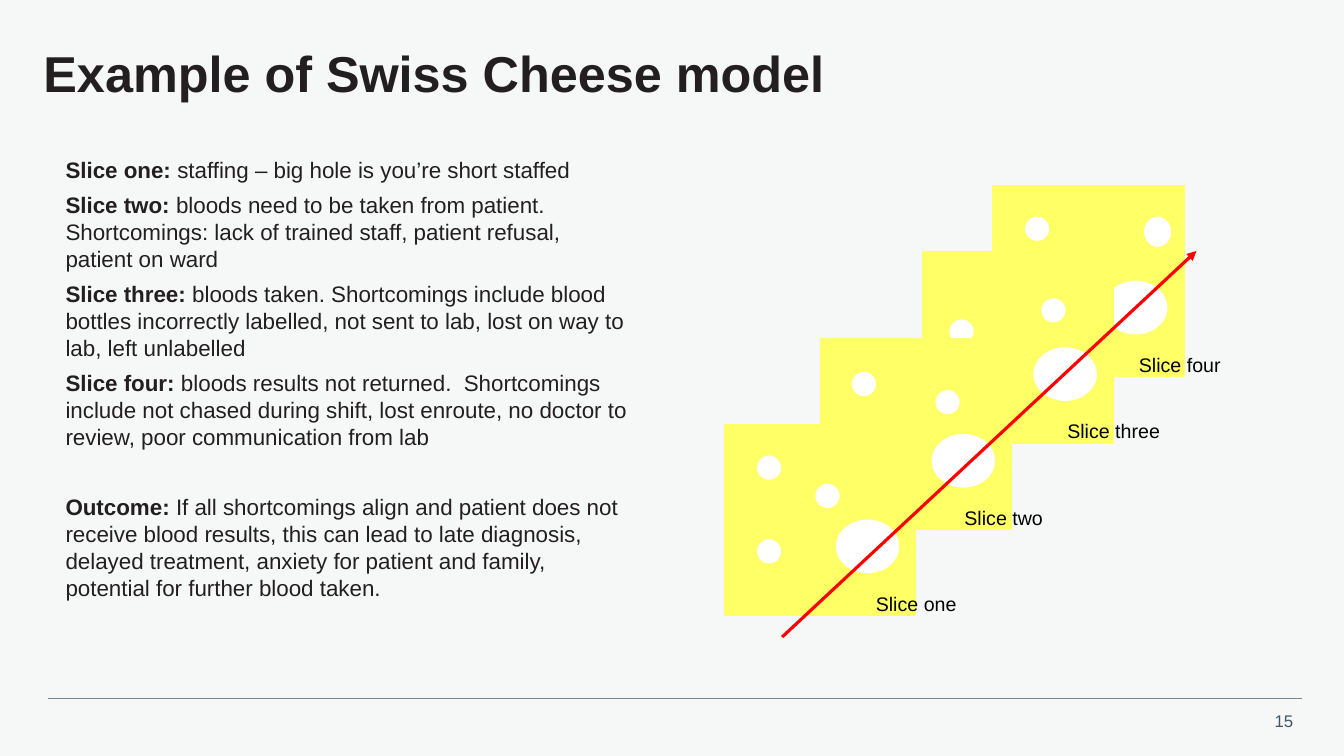
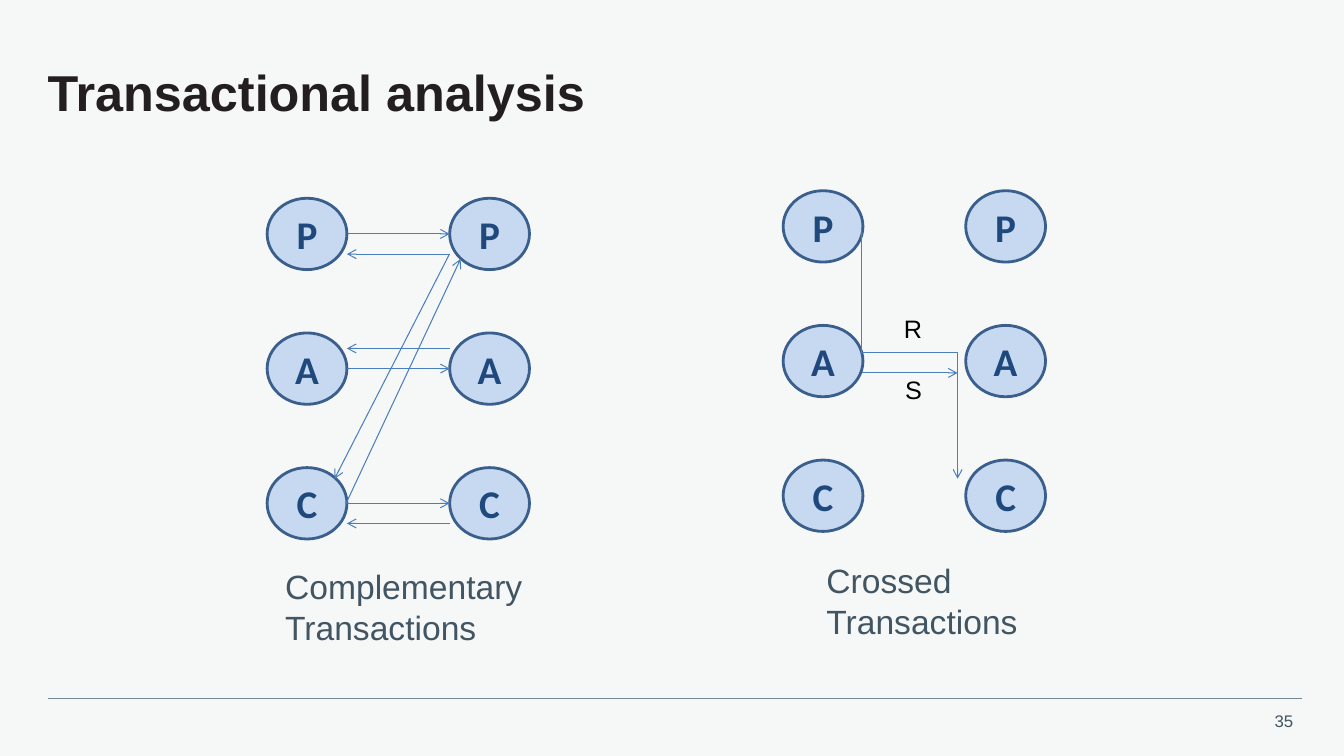
"""Build two training slides: the Swiss Cheese model and transactional analysis."""
from lxml import etree
from pptx import Presentation
from pptx.dml.color import RGBColor
from pptx.enum import shapes, text
from pptx.oxml.ns import qn
from pptx.util import Pt

PAPER = RGBColor(0xF6, 0xF8, 0xF8)
INK = RGBColor(0x23, 0x1F, 0x20)
SLATE = RGBColor(0x42, 0x55, 0x63)
RULE = RGBColor(0x76, 0x86, 0x92)
BLACK = RGBColor(0, 0, 0)
WHITE = RGBColor(255, 255, 255)
CHEESE = RGBColor(0xFF, 0xFF, 0x66)
RED = RGBColor(255, 0, 0)
EGO_FILL = RGBColor(0xC6, 0xD9, 0xF1)
EGO_LINE = RGBColor(0x3A, 0x5F, 0x8C)
EGO_TEXT = RGBColor(0x1F, 0x49, 0x7D)
ARROW = RGBColor(0x4B, 0x7E, 0xBC)

TITLE_FONT = dict(name="Arial", size=Pt(36), bold=True, color=INK)
BODY_FONT = dict(name="Arial", size=Pt(16), bold=False, color=INK)
NUMBER_FONT = dict(name="Arial", size=Pt(12), color=SLATE)
CAPTION_FONT = dict(name="Arial", size=Pt(24), color=SLATE)
SLICE_FONT = dict(name="Arial", size=Pt(14), color=BLACK)
SIGN_FONT = dict(name="Arial", size=Pt(18), color=BLACK)
EGO_FONT = dict(name="Calibri", size=Pt(28), bold=True, color=EGO_TEXT)

EXPLANATIONS = [
    ("Slice one: ", "staffing – big hole is you’re short staffed", 0),
    ("Slice two: ", "bloods need to be taken from patient. Shortcomings: lack of "
     "trained staff, patient refusal, patient on ward", 0),
    ("Slice three: ", "bloods taken. Shortcomings include blood bottles incorrectly "
     "labelled, not sent to lab, lost on way to lab, left unlabelled", 0),
    ("Slice four: ", "bloods results not returned.  Shortcomings include not chased "
     "during shift, lost enroute, no doctor to review, poor communication from lab", 0),
    ("Outcome: ", "If all shortcomings align and patient does not receive blood results, "
     "this can lead to late diagnosis, delayed treatment, anxiety for patient and "
     "family, potential for further blood taken.", 25),
]

SLICE_SIDE = 136.5
SMALL_HOLE = (17.3, 17.3)
TALL_HOLE = (19.4, 21.6)
BIG_HOLE = (79.3, 68, 45.4, 38.4)
SLICES = [
    ("Slice four", 709.2, 132.5, 97.2, 73.4,
     [(23, 22.3, *SMALL_HOLE), (108, 22.3, *TALL_HOLE)]),
    ("Slice three", 658.8, 180, 96.5, 81.4,
     [(19.4, 48.2, *SMALL_HOLE), (85, 33, *SMALL_HOLE)]),
    ("Slice two", 586.1, 241.9, 95.7, 71.3,
     [(22.3, 23.8, *SMALL_HOLE), (82.1, 36.7, *SMALL_HOLE)]),
    ("Slice one", 517.7, 303.1, 100.8, 72.7,
     [(23, 22.3, *SMALL_HOLE), (23, 82.1, *SMALL_HOLE), (64.8, 42.5, *SMALL_HOLE)]),
]

EGO_STATES = "PAC"
EGO_WIDTH, EGO_HEIGHT = 57, 51
COLUMN_STEP, ROW_STEP = 130.4, 96.2
DIAGRAMS = [
    (190.8, 141.6, ["Complementary", "Transactions"], (196.6, 401, 192.2, 65.5)),
    (559.4, 136.2, ["Crossed", "Transactions"], (583.2, 396.7, 152.6, 65.5)),
]
REPLY_OFFSETS = [14.4, -14.4, 14.4]
DIAGONALS = [(321.1, 181.4, 239, 342), (247, 360, 329, 185)]
SIGNS = [("S", 639.4, 263.5), ("R", 638.6, 220.3)]


def apply(target, formats):
    for name, value in formats.items():
        if name == "color":
            target.color.rgb = value
        else:
            setattr(target, name, value)


def place(shape, left, top, width, height):
    apply(shape, dict(left=Pt(left), top=Pt(top), width=Pt(width), height=Pt(height)))


def clear_insets(frame):
    apply(frame, dict(margin_left=0, margin_top=0, margin_right=0, margin_bottom=0,
                      auto_size=text.MSO_AUTO_SIZE.NONE, word_wrap=True))


def add_label(slide, lines, box, font, alignment=text.PP_ALIGN.LEFT):
    frame = slide.shapes.add_textbox(*map(Pt, box)).text_frame
    frame.word_wrap = False
    frame.text = "\n".join(lines)
    for paragraph in frame.paragraphs:
        paragraph.alignment = alignment
        apply(paragraph.font, font)


def add_line(slide, ends, color, width, head=None, kind=shapes.MSO_CONNECTOR.STRAIGHT):
    connector = slide.shapes.add_connector(kind, *map(Pt, ends))
    apply(connector.line, dict(color=color, width=Pt(width)))
    properties = connector._element.spPr
    if head:
        etree.SubElement(properties.find(qn("a:ln")), qn("a:tailEnd"), type=head)
    etree.SubElement(properties, qn("a:effectLst"))
    return connector


def add_vertical_elbow(slide, start_x, start_y, end_x, end_y):
    middle_x, middle_y = (start_x + end_x) / 2, (start_y + end_y) / 2
    half_run, half_rise = (end_x - start_x) / 2, (end_y - start_y) / 2
    ends = (middle_x + half_rise, middle_y - half_run,
            middle_x - half_rise, middle_y + half_run)
    elbow = add_line(slide, ends, ARROW, 0.75, "arrow", shapes.MSO_CONNECTOR.ELBOW)
    elbow._element.spPr.find(qn("a:xfrm")).set("rot", str(270 * 60000))


def add_filled(container, kind, box, fill, line=None, width=1):
    shape = container.shapes.add_shape(kind, *map(Pt, box))
    shape.shadow.inherit = False
    shape.fill.solid()
    shape.fill.fore_color.rgb = fill
    if line is None:
        shape.line.fill.background()
    else:
        apply(shape.line, dict(color=line, width=Pt(width)))
    return shape


def add_base(presentation, layout, title, left, top, number):
    slide = presentation.slides.add_slide(presentation.slide_layouts[layout])
    place(slide.shapes.title, left, top, 898, 68.4)
    frame = slide.shapes.title.text_frame
    clear_insets(frame)
    frame.vertical_anchor = text.MSO_ANCHOR.MIDDLE
    frame.text = title
    paragraph = frame.paragraphs[0]
    apply(paragraph, dict(alignment=text.PP_ALIGN.LEFT, line_spacing=0.9))
    apply(paragraph.font, TITLE_FONT)
    add_label(slide, [number], (901.4, 504, 29.5, 21.6), NUMBER_FONT, text.PP_ALIGN.RIGHT)
    add_line(slide, (34, 499, 930, 499), RULE, 0.5)
    return slide


def fill_explanations(body):
    place(body, 46.8, 111.6, 401.8, 382)
    frame = body.text_frame
    clear_insets(frame)
    frame.vertical_anchor = text.MSO_ANCHOR.TOP
    for index, (lead, detail, gap) in enumerate(EXPLANATIONS):
        paragraph = frame.add_paragraph() if index else frame.paragraphs[0]
        properties = paragraph._p.get_or_add_pPr()
        properties.set("marL", "0")
        properties.set("indent", "0")
        etree.SubElement(properties, qn("a:buNone"))
        apply(paragraph, dict(space_before=Pt(gap), space_after=Pt(6)))
        for content, bold in ((lead, True), (detail, False)):
            run = paragraph.add_run()
            run.text = content
            apply(run.font, {**BODY_FONT, "bold": bold})


def build_cheese(presentation):
    slide = add_base(presentation, 1, "Example of Swiss Cheese model", 31, 20.2, "15")
    fill_explanations(slide.placeholders[1])
    for _, left, top, _, _, holes in SLICES:
        group = slide.shapes.add_group_shape()
        add_filled(group, shapes.MSO_SHAPE.RECTANGLE,
                   (left, top, SLICE_SIDE, SLICE_SIDE), CHEESE, CHEESE)
        for x, y, width, height in holes + [BIG_HOLE]:
            add_filled(group, shapes.MSO_SHAPE.OVAL,
                       (left + x, top + y, width, height), WHITE)
    add_line(slide, (558.7, 455, 854.6, 179.3), RED, 2.25, "triangle")
    for name, left, top, offset, width, _ in SLICES:
        add_label(slide, [name], (left + offset, top + 116, width, 24.5), SLICE_FONT)


def build_transactions(presentation):
    slide = add_base(presentation, 5, "Transactional analysis", 34, 33.8, "35")
    for left, top, caption, caption_box in DIAGRAMS:
        for column in range(2):
            for row, state in enumerate(EGO_STATES):
                box = (left + column * COLUMN_STEP, top + row * ROW_STEP,
                       EGO_WIDTH, EGO_HEIGHT)
                circle = add_filled(slide, shapes.MSO_SHAPE.OVAL, box,
                                    EGO_FILL, EGO_LINE, 2)
                circle.text_frame.text = state
                circle.text_frame.vertical_anchor = text.MSO_ANCHOR.MIDDLE
                paragraph = circle.text_frame.paragraphs[0]
                paragraph.alignment = text.PP_ALIGN.CENTER
                apply(paragraph.font, EGO_FONT)
        add_label(slide, caption, caption_box, CAPTION_FONT)

    left, top = DIAGRAMS[0][:2]
    start, end = left + EGO_WIDTH, left + COLUMN_STEP
    arrows = list(DIAGONALS)
    for row, offset in enumerate(REPLY_OFFSETS):
        middle = top + EGO_HEIGHT / 2 + row * ROW_STEP
        arrows += [(start, middle, end, middle),
                   (end, middle + offset, start, middle + offset)]
    arrows.append((615.6, 266.4, 684, 266.4))
    for ends in arrows:
        add_line(slide, ends, ARROW, 0.75, "arrow")
    add_vertical_elbow(slide, 615.6, 162, 684, 342)
    for sign, left, top in SIGNS:
        add_label(slide, [sign], (left, top, 27, 29), SIGN_FONT)


def main():
    presentation = Presentation()
    apply(presentation, dict(slide_width=Pt(960), slide_height=Pt(540)))
    background = presentation.slide_master.background.fill
    background.solid()
    background.fore_color.rgb = PAPER
    build_cheese(presentation)
    build_transactions(presentation)
    presentation.save("out.pptx")


if __name__ == "__main__":
    main()
